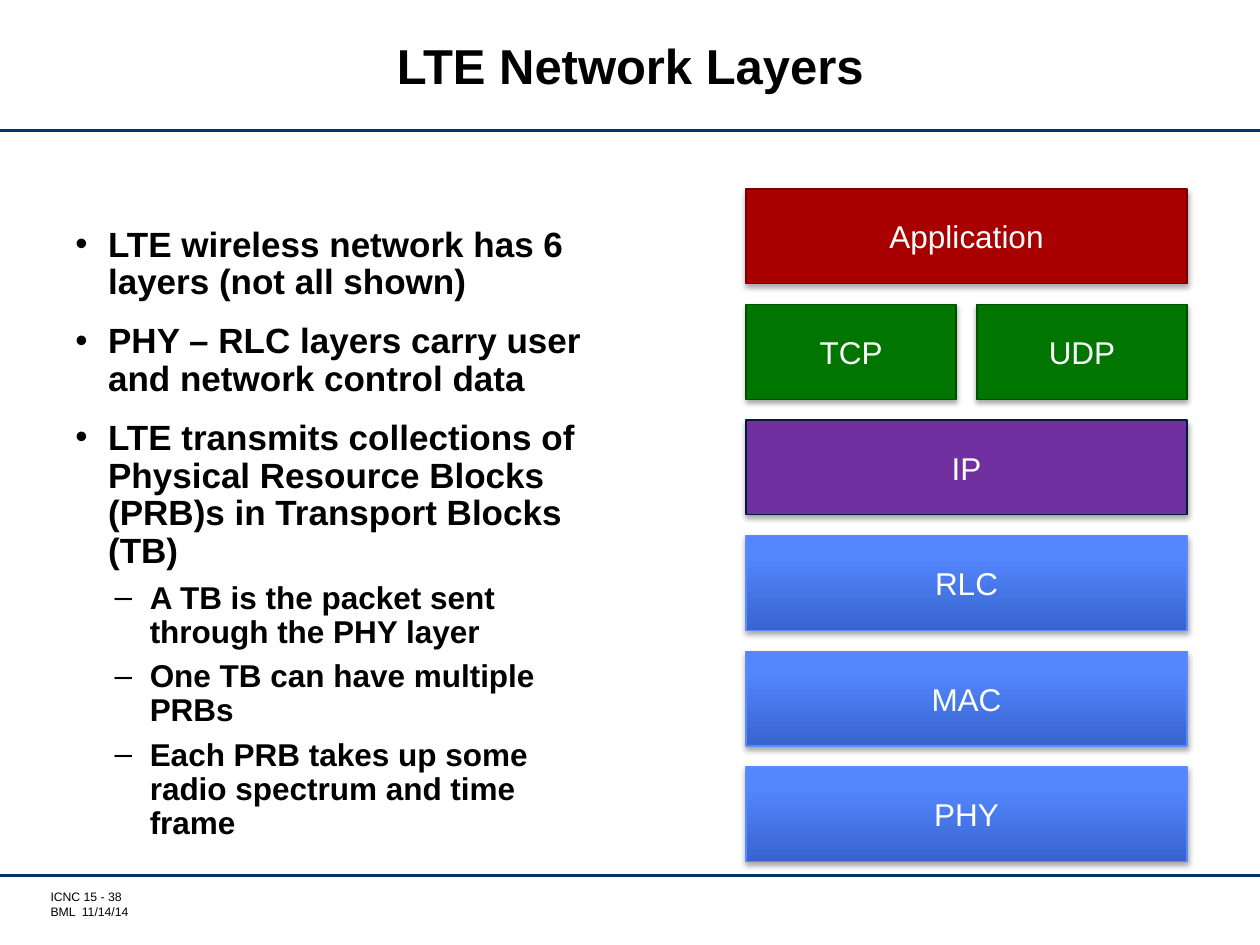
import copy

import pptx
import pptx.dml.color
import pptx.enum.shapes
import pptx.enum.text
import pptx.oxml
import pptx.oxml.ns
import pptx.util
from lxml import etree

Cm = pptx.util.Cm
Pt = pptx.util.Pt
RGB = pptx.dml.color.RGBColor
ALIGN = pptx.enum.text.PP_ALIGN
ANCHOR = pptx.enum.text.MSO_ANCHOR
qn = pptx.oxml.ns.qn

BLACK = RGB(0x00, 0x00, 0x00)
WHITE = RGB(0xFF, 0xFF, 0xFF)
NAVY = RGB(0x00, 0x37, 0x67)
RED, RED_EDGE = RGB(0xA8, 0x00, 0x00), RGB(0x74, 0x00, 0x00)
GREEN, GREEN_EDGE = RGB(0x00, 0x76, 0x00), RGB(0x00, 0x4E, 0x00)
PURPLE, PURPLE_EDGE = RGB(0x70, 0x30, 0xA0), RGB(0x00, 0x1B, 0x34)
BLUE_DARK, BLUE_MID = RGB(0x37, 0x64, 0xCE), RGB(0x54, 0x87, 0xFF)
BLUE_LIGHT, BLUE_EDGE = RGB(0x56, 0x88, 0xFF), RGB(0x5B, 0x8A, 0xFB)

SLIDE_WIDTH = 25.4
STACK_LEFT, STACK_TOP, STACK_WIDTH = 15.04, 3.81, 8.89
LAYER_HEIGHT, LAYER_GAP = 1.91, 0.42

# Rows of the stack: layer names, fill (None for the blue gradient), edge
LAYERS = [
    (["Application"], RED, RED_EDGE),
    (["TCP", "UDP"], GREEN, GREEN_EDGE),
    (["IP"], PURPLE, PURPLE_EDGE),
    (["RLC"], None, BLUE_EDGE),
    (["MAC"], None, BLUE_EDGE),
    (["PHY"], None, BLUE_EDGE),
]

POINTS = [
    (0, "LTE wireless network has 6 layers (not all shown)"),
    (0, "PHY – RLC layers carry user and network control data"),
    (0, "LTE transmits collections of Physical Resource Blocks (PRB)s "
        "in Transport Blocks (TB)"),
    (1, "A TB is the packet sent through the PHY layer"),
    (1, "One TB can have multiple PRBs"),
    (1, "Each PRB takes up some radio spectrum and time frame"),
]

# Format of each bullet level; indents are in cm
LEVELS = [
    dict(size=20, bullet="•", margin=0.66, hanging=0.66, before=12),
    dict(size=18, bullet="–", margin=1.5, hanging=0.71, before=6),
]


def add_text(frame, text, size, color=BLACK, bold=False, align=ALIGN.LEFT,
             spacing=None, before=0, level=0, bullet=None, margin=0, hanging=0):
    """Write one paragraph, using the empty first one if it is free."""
    first = not frame.paragraphs[0].runs
    paragraph = frame.paragraphs[0] if first else frame.add_paragraph()
    paragraph.level = level
    paragraph.alignment = align
    if bullet:
        properties = paragraph._p.get_or_add_pPr()
        properties.set("marL", str(Cm(margin)))
        properties.set("indent", str(-Cm(hanging)))
        etree.SubElement(properties, qn("a:buFont"), typeface="Arial")
        etree.SubElement(properties, qn("a:buChar"), char=bullet)
    if spacing:
        paragraph.line_spacing = spacing
    if before and not first:
        paragraph.space_before = Pt(before)
    run = paragraph.add_run()
    run.text = text
    run.font.name = "Arial"
    run.font.size = Pt(size)
    run.font.bold = bold
    run.font.color.rgb = color


def add_box(slide, left, top, width, height, anchor=ANCHOR.TOP):
    box = slide.shapes.add_textbox(Cm(left), Cm(top), Cm(width), Cm(height))
    box.text_frame.word_wrap = True
    box.text_frame.vertical_anchor = anchor
    return box.text_frame


def add_rule(slide, y):
    rule = slide.shapes.add_connector(
        pptx.enum.shapes.MSO_CONNECTOR.STRAIGHT,
        Cm(0), Cm(y), Cm(SLIDE_WIDTH), Cm(y))
    rule.line.color.rgb = NAVY
    rule.line.width = Pt(1.75)
    etree.SubElement(rule._element.spPr, qn("a:effectLst"))


def fill_blue_gradient(layer):
    layer.fill.gradient()
    layer.fill.gradient_angle = 90
    stop_list = layer._element.spPr.find(".//" + qn("a:gsLst"))
    stop_list.append(copy.deepcopy(stop_list[-1]))
    stops = [(0, BLUE_DARK), (0.8, BLUE_MID), (1, BLUE_LIGHT)]
    for stop, (position, color) in zip(layer.fill.gradient_stops, stops):
        stop.position = position
        stop.color.rgb = color


def add_shadow(layer):
    layer.shadow.inherit = False
    effects = layer._element.spPr.find(qn("a:effectLst"))
    shadow = etree.SubElement(
        effects, qn("a:outerShdw"), blurRad=str(Pt(3.1)), dist=str(Pt(1.8)),
        dir="5400000", rotWithShape="0")
    color = etree.SubElement(shadow, qn("a:srgbClr"), val=str(BLACK))
    etree.SubElement(color, qn("a:alpha"), val="35000")


def add_layer(slide, name, left, top, width, fill, edge):
    layer = slide.shapes.add_shape(
        pptx.enum.shapes.MSO_SHAPE.RECTANGLE,
        Cm(left), Cm(top), Cm(width), Cm(LAYER_HEIGHT))
    if fill is None:
        fill_blue_gradient(layer)
    else:
        layer.fill.solid()
        layer.fill.fore_color.rgb = fill
    layer.line.color.rgb = edge
    layer.line.width = Pt(0.75)
    add_shadow(layer)
    layer.text_frame.vertical_anchor = ANCHOR.MIDDLE
    add_text(layer.text_frame, name, size=18, color=WHITE, align=ALIGN.CENTER)


def add_stack(slide):
    for row, (names, fill, edge) in enumerate(LAYERS):
        top = STACK_TOP + row * (LAYER_HEIGHT + LAYER_GAP)
        width = (STACK_WIDTH - (len(names) - 1) * LAYER_GAP) / len(names)
        for column, name in enumerate(names):
            left = STACK_LEFT + column * (width + LAYER_GAP)
            add_layer(slide, name, left, top, width, fill, edge)


def main():
    deck = pptx.Presentation()
    deck.slide_width, deck.slide_height = Cm(SLIDE_WIDTH), Cm(19.05)
    slide = deck.slides.add_slide(deck.slide_layouts[6])

    # Rules under the title and above the footer
    for y in (2.64, 17.65):
        add_rule(slide, y)

    # Footer
    footer = add_box(slide, 0.89, 17.93, 3.02, 0.61)
    footer.margin_left = Cm(0.13)
    footer.margin_top = footer.margin_right = footer.margin_bottom = 0
    for line in ("ICNC 15 - 38", "BML  11/14/14"):
        add_text(footer, line, size=7)

    # Title
    title = add_box(slide, 2.62, 0.28, 20.17, 2.26, ANCHOR.MIDDLE)
    add_text(title, "LTE Network Layers", size=28, bold=True,
             align=ALIGN.CENTER, spacing=Pt(28))

    # Bullet points
    points = add_box(slide, 1.27, 4.45, 11.23, 12.57)
    for level, text in POINTS:
        add_text(points, text, bold=True, spacing=0.9, level=level,
                 **LEVELS[level])

    # Protocol stack
    add_stack(slide)

    deck.save("out.pptx")


if __name__ == "__main__":
    main()
